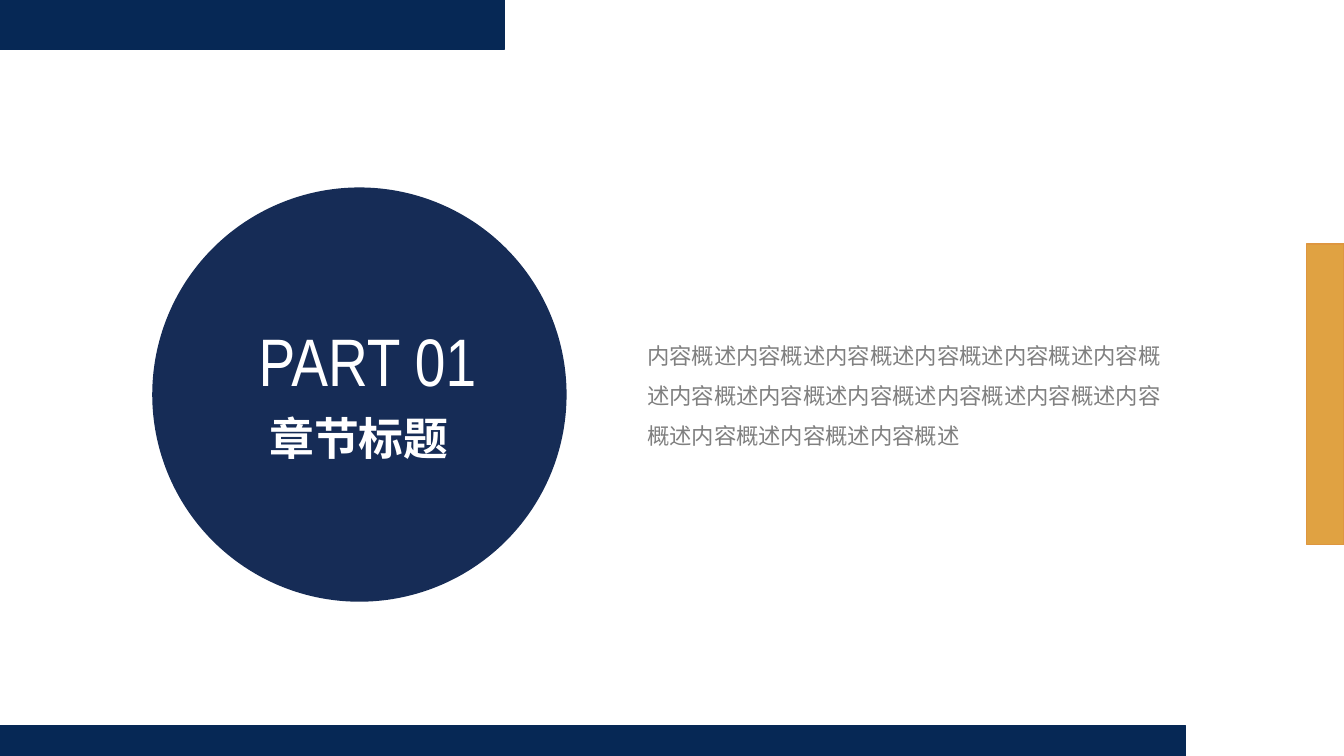
from dataclasses import dataclass

import pptx
import pptx.dml.color
import pptx.enum.shapes
import pptx.enum.text
import pptx.oxml
import pptx.oxml.ns
import pptx.util

SHAPE = pptx.enum.shapes.MSO_SHAPE
ALIGN = pptx.enum.text.PP_ALIGN
ANCHOR = pptx.enum.text.MSO_ANCHOR
SLIDE_W = pptx.util.Inches(13.33)
SLIDE_H = pptx.util.Inches(7.5)
NAVY = "062855"
CJK = "Noto Sans CJK SC"


@dataclass
class Box:
    """A rectangle in percent of the slide's width and height."""
    x: float
    y: float
    w: float
    h: float

    def emu(self) -> tuple[int, int, int, int]:
        return (round(SLIDE_W * self.x / 100), round(SLIDE_H * self.y / 100),
                round(SLIDE_W * self.w / 100), round(SLIDE_H * self.h / 100))


@dataclass
class Block:
    """A plain filled shape."""
    kind: int
    box: Box
    fill: str
    line: str | None = None


def rgb(value: str) -> pptx.dml.color.RGBColor:
    return pptx.dml.color.RGBColor.from_string(value)


def draw_block(s, block: Block):
    sp = s.shapes.add_shape(block.kind, *block.box.emu())
    sp.shadow.inherit = False
    sp.fill.solid()
    sp.fill.fore_color.rgb = rgb(block.fill)
    if block.line:
        sp.line.color.rgb = rgb(block.line)
        sp.line.width = pptx.util.Pt(1)
    else:
        sp.line.fill.background()
    return sp


def write(sp, text: str, *, size: float, color: str, font: str = CJK,
          bold: bool = False, align=ALIGN.LEFT, spacing: float = 1.0) -> None:
    tf = sp.text_frame
    tf.word_wrap = True
    tf.auto_size = pptx.enum.text.MSO_AUTO_SIZE.NONE
    tf.vertical_anchor = ANCHOR.TOP
    p = tf.paragraphs[0]
    p.alignment = align
    p.line_spacing = spacing
    r = p.add_run()
    r.text = text
    r.font.size = pptx.util.Pt(size)
    r.font.bold = bold
    r.font.color.rgb = rgb(color)
    r.font.name = font
    # East Asian glyphs take their own typeface element
    ea = pptx.oxml.parse_xml(
        f'<a:ea {pptx.oxml.ns.nsdecls("a")} typeface="{font}"/>')
    r.font.fill  # the run's fill precedes its typefaces
    r.font._element.find(pptx.oxml.ns.qn("a:latin")).addnext(ea)


def main() -> None:
    prs = pptx.Presentation()
    prs.slide_width, prs.slide_height = SLIDE_W, SLIDE_H
    s = prs.slides.add_slide(prs.slide_layouts[5])

    # Chapter disc, with the title placeholder raised above it
    disc = draw_block(s, Block(SHAPE.OVAL, Box(11.33, 24.8, 30.83, 54.8), "162C56"))
    title = s.shapes.title
    disc.element.addnext(title.element)
    title.left, title.top, title.width, title.height = Box(
        19.28, 53.6, 15.08, 8.53).emu()
    write(title, "章节标题", size=32, color="FFFFFF", bold=True)

    # Part number and summary
    part = s.shapes.add_textbox(*Box(11.93, 41.6, 30.83, 12.13).emu())
    write(part, "PART 01", size=48, color="FFFFFF", font="Arial Narrow",
          align=ALIGN.CENTER)
    summary = s.shapes.add_textbox(*Box(47.41, 42.8, 40.21, 16.93).emu())
    write(summary, "内容概述" * 15, size=16, color="808080", spacing=1.5)

    # Edge bars: top, right, bottom
    for bar in (
        Block(SHAPE.RECTANGLE, Box(0, 0, 37.51, 6.53), NAVY, NAVY),
        Block(SHAPE.RECTANGLE, Box(97.22, 32.27, 2.78, 39.73), "E0A242", "DE9640"),
        Block(SHAPE.RECTANGLE, Box(0, 96, 88.22, 4.27), NAVY, NAVY),
    ):
        draw_block(s, bar)

    prs.save("out.pptx")


if __name__ == "__main__":
    main()
